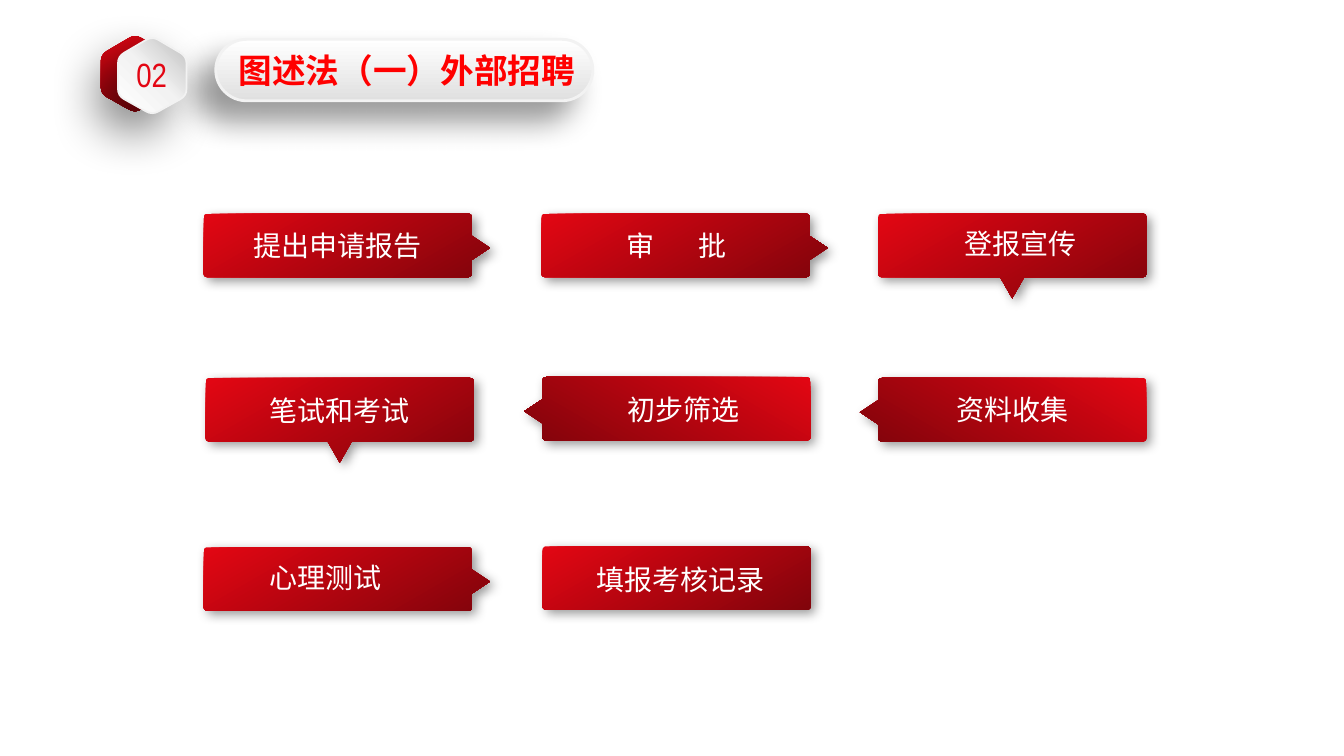
from math import dist

from lxml.etree import SubElement
from pptx import Presentation
from pptx.dml.color import RGBColor
from pptx.enum.shapes import MSO_SHAPE as Preset
from pptx.enum.text import MSO_AUTO_SIZE as AutoSize, PP_ALIGN as Align
from pptx.oxml.ns import qn
from pptx.util import Pt

PX = 9144
CARD_W, CARD_H, CARD_ROUND = 266, 63, 4
CJK = "Noto Sans CJK SC"
RED = [(0, "E30613"), (100, "81040B")]
CARD_SHADOW = (40, 8, 4, 45)

STEPS = [
    (202, 212, "right", "提出申请报告", 335, 222),
    (537, 212, "right", "审\t批", 671, 222),
    (871, 212, "down", "登报宣传", 1012, 220),
    (871, 375, "left", "资料收集", 1004, 384),
    (538, 374, "left", "初步筛选", 678, 384),
    (204, 375, "down", "笔试和考试", 337, 385),
    (202, 543, "right", "心理测试", 323, 551),
    (538, 542, None, "填报考核记录", 675, 553),
]


def color(hex_code):
    return RGBColor.from_string(hex_code)


def px(*lengths):
    return [round(length * PX) for length in lengths]


def add_color(parent, hex_code):
    return SubElement(parent, qn("a:srgbClr"), val=hex_code)


def paint(shape, stops, angle, outline=None, shadow=None):
    shape.fill.gradient()
    shape.fill.gradient_angle = (360 - angle) % 360
    stop_list = shape._element.spPr.find(qn("a:gradFill")).find(qn("a:gsLst"))
    for old_stop in list(stop_list):
        stop_list.remove(old_stop)
    for position, hex_code in stops:
        add_color(SubElement(stop_list, qn("a:gs"), pos=str(position * 1000)), hex_code)
    if outline:
        hex_code, width = outline
        shape.line.color.rgb = color(hex_code)
        shape.line.width = Pt(width)
    else:
        shape.line.fill.background()
    shape.shadow.inherit = False
    if shadow:
        opacity, blur, distance, direction = shadow
        effects = shape._element.spPr.find(qn("a:effectLst"))
        outer = SubElement(
            effects, qn("a:outerShdw"), blurRad=str(Pt(blur)), dist=str(Pt(distance)),
            dir=str(direction * 60000), algn="ctr", rotWithShape="0",
        )
        SubElement(add_color(outer, "000000"), qn("a:alpha"), val=str(opacity * 1000))


def toward(start, end, length):
    share = length / dist(start, end)
    return tuple(a + (b - a) * share for a, b in zip(start, end))


def rounded_outline(corners):
    outline = []
    for i, (x, y, radius) in enumerate(corners):
        if not radius:
            outline.append((x, y))
            continue
        corner = (x, y)
        entry = toward(corner, corners[i - 1][:2], radius)
        leave = toward(corner, corners[(i + 1) % len(corners)][:2], radius)
        for t in (0, 0.25, 0.5, 0.75, 1):
            outline.append(tuple(
                (1 - t) ** 2 * a + 2 * t * (1 - t) * b + t ** 2 * c
                for a, b, c in zip(entry, corner, leave)
            ))
    return outline


def add_outline(slide, left, top, corners):
    points = [px(left + x, top + y) for x, y in rounded_outline(corners)]
    builder = slide.shapes.build_freeform(*points[0], scale=1.0)
    builder.add_line_segments(points[1:], close=True)
    return builder.convert_to_shape()


def add_pill(slide, left, top, width, height, rounding):
    pill = slide.shapes.add_shape(Preset.ROUNDED_RECTANGLE, *px(left, top, width, height))
    pill.adjustments[0] = rounding
    return pill


def add_card(slide, left, top, pointer):
    if pointer is None:
        card = add_pill(slide, left, top, CARD_W, CARD_H, 0.058)
    else:
        side = [(CARD_W, 22, 0), (CARD_W + 18, 34, 0), (CARD_W, 46, 0)]
        below = [(145, CARD_H, 0), (133, CARD_H + 21, 0), (121, CARD_H, 0)]
        corners = [
            (0, 0, CARD_ROUND),
            (CARD_W, 0, CARD_ROUND),
            *(side if pointer != "down" else []),
            (CARD_W, CARD_H, CARD_ROUND),
            *(below if pointer == "down" else []),
            (0, CARD_H, CARD_ROUND),
        ]
        if pointer == "left":
            corners = [(CARD_W - x, y, radius) for x, y, radius in corners]
        card = add_outline(slide, left, top, corners)
    paint(card, RED, 120 if pointer == "left" else 60, shadow=CARD_SHADOW)


def add_hexagon(slide, left, top, stops, angle, outline=None, shadow=None):
    corners = [(34, -2, 7), (68, 18, 7), (68, 57, 7), (34, 76, 7), (0, 57, 7), (0, 18, 7)]
    hexagon = add_outline(slide, left, top, corners)
    paint(hexagon, stops, angle, outline, shadow)


def add_text(slide, box, text, size, font, hex_code, align=Align.CENTER, bold=False):
    frame = slide.shapes.add_textbox(*px(*box)).text_frame
    frame.word_wrap = False
    frame.auto_size = AutoSize.SHAPE_TO_FIT_TEXT
    line = frame.paragraphs[0]
    line.text = text
    line.alignment = align
    if "\t" in text:
        tabs = SubElement(line._p.get_or_add_pPr(), qn("a:tabLst"))
        SubElement(tabs, qn("a:tab"), pos=str(71 * PX), algn="l")
    line.font.size = Pt(size)
    line.font.bold = bold
    line.font.color.rgb = color(hex_code)
    line.font.name = font
    SubElement(line._p.pPr.find(qn("a:defRPr")), qn("a:ea"), typeface=font)


def add_label(slide, text, center, top):
    spread = "\t" in text
    width = 119 if spread else 28 * len(text) + 20
    box = (center - width / 2, top, width, 44)
    add_text(slide, box, text, 20, CJK, "FFFFFF", Align.LEFT if spread else Align.CENTER)


def add_heading(slide):
    add_hexagon(slide, 100, 36, RED, 60)
    pill = add_pill(slide, 214, 39, 374, 61, 0.5)
    paint(pill, [(0, "FFFFFF"), (100, "E0E0E0")], 90, ("F2F2F2", 2), (40, 22, 20, 135))
    silver = [(0, "FFFFFF"), (50, "F2F2F2"), (100, "BFBFBF")]
    add_hexagon(slide, 117, 38, silver, 315, ("F2F2F2", 1.25), (50, 35, 20, 135))
    add_text(slide, (112, 49, 77, 50), "02", 24, "Arial Narrow", "E30613")
    add_text(slide, (227, 45, 357, 51), "图述法（一）外部招聘", 24, CJK, "FF0000",
             Align.LEFT, bold=True)


def main():
    deck = Presentation()
    deck.slide_width, deck.slide_height = px(1333, 750)
    slide = deck.slides.add_slide(deck.slide_layouts[6])
    add_heading(slide)
    for left, top, pointer, text, center, text_top in STEPS:
        add_card(slide, left, top, pointer)
        add_label(slide, text, center, text_top)
    deck.save("out.pptx")


if __name__ == "__main__":
    main()
